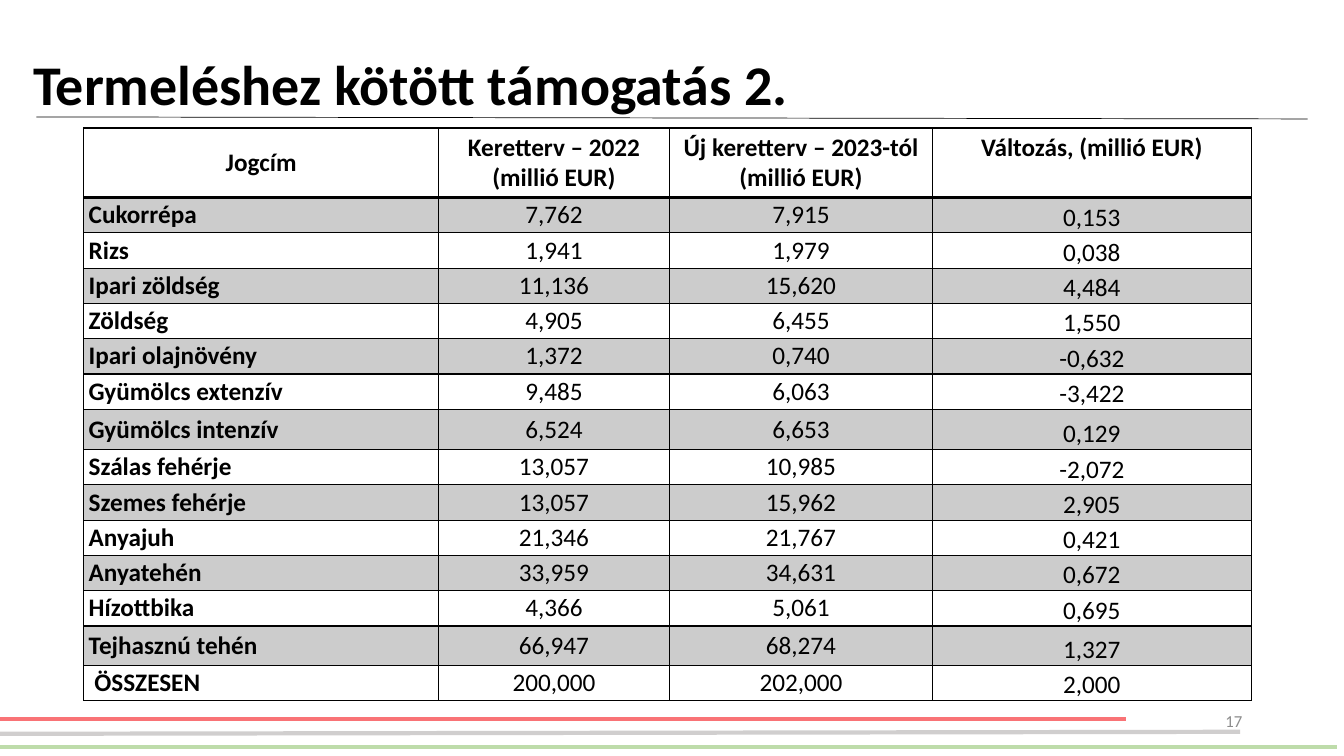
from lxml import etree
from pptx import Presentation
from pptx.dml.color import RGBColor
from pptx.enum.shapes import MSO_CONNECTOR
from pptx.enum.text import MSO_ANCHOR, PP_ALIGN
from pptx.oxml.ns import qn
from pptx.util import Pt

PX = 9144  # 100 px to the inch
TOP, MIDDLE, BOTTOM = MSO_ANCHOR.TOP, MSO_ANCHOR.MIDDLE, MSO_ANCHOR.BOTTOM
LEFT, CENTER, RIGHT = PP_ALIGN.LEFT, PP_ALIGN.CENTER, PP_ALIGN.RIGHT
STRAIGHT = MSO_CONNECTOR.STRAIGHT


def rgb(value):
    return RGBColor.from_string(value)


def write(tf, text, size, align, bold=False, color="000000"):
    for i, line in enumerate(text.split("\n")):
        p = tf.paragraphs[0] if i == 0 else tf.add_paragraph()
        p.alignment = align
        r = p.add_run()
        r.text = line
        r.font.name = "Calibri"
        r.font.size = Pt(size)
        r.font.bold = bold
        r.font.color.rgb = rgb(color)


prs = Presentation()
prs.slide_width, prs.slide_height = 1333 * PX, 750 * PX
s = prs.slides.add_slide(prs.slide_layouts[6])

# Footer stripes and title rule
for x1, y1, x2, y2, color, width in [
    (0, 713, 1117, 713, "F97376", 3),
    (0, 741, 1326, 741, "BEDCAA", 3),
    (0, 728, 1230, 726, "D0CECE", 3),
    (36, 116, 1297, 118, "000000", 0.5),
]:
    line = s.shapes.add_connector(STRAIGHT, x1 * PX, y1 * PX, x2 * PX, y2 * PX)
    line.line.color.rgb = rgb(color)
    line.line.width = Pt(width)
    etree.SubElement(line._element.spPr, qn("a:effectLst"))

# Title and page number
for x, y, w, h, text, size, align, bold, color in [
    (23, 14, 1150, 145, "Termeléshez kötött támogatás 2.", 40, LEFT, True, "000000"),
    (942, 695, 300, 40, "17", 12, RIGHT, False, "8C8C8C"),
]:
    tf = s.shapes.add_textbox(x * PX, y * PX, w * PX, h * PX).text_frame
    tf.word_wrap = True
    tf.vertical_anchor = MIDDLE
    write(tf, text, size, align, bold, color)
    tf.paragraphs[0].line_spacing = 0.9 if bold else 1.0

# Table data
rows = [
    ("Jogcím", "Keretterv – 2022\n(millió EUR)",
     "Új keretterv – 2023-tól (millió EUR)", "Változás, (millió EUR)"),
    ("Cukorrépa", "7,762", "7,915", "0,153"),
    ("Rizs", "1,941", "1,979", "0,038"),
    ("Ipari zöldség", "11,136", "15,620", "4,484"),
    ("Zöldség", "4,905", "6,455", "1,550"),
    ("Ipari olajnövény", "1,372", "0,740", "-0,632"),
    ("Gyümölcs extenzív", "9,485", "6,063", "-3,422"),
    ("Gyümölcs intenzív", "6,524", "6,653", "0,129"),
    ("Szálas fehérje", "13,057", "10,985", "-2,072"),
    ("Szemes fehérje", "13,057", "15,962", "2,905"),
    ("Anyajuh", "21,346", "21,767", "0,421"),
    ("Anyatehén", "33,959", "34,631", "0,672"),
    ("Hízottbika", "4,366", "5,061", "0,695"),
    ("Tejhasznú tehén", "66,947", "68,274", "1,327"),
    (" ÖSSZESEN", "200,000", "202,000", "2,000"),
]
col_widths = [352, 229, 261, 316]
row_heights = {0: 69, 7: 40, 13: 39}  # every other row is 35

# Table
table = s.shapes.add_table(len(rows), len(col_widths), 83 * PX, 127 * PX,
                           1158 * PX, 568 * PX).table
table.first_row = table.horz_banding = False
for j, width in enumerate(col_widths):
    table.columns[j].width = width * PX

for i, row in enumerate(rows):
    table.rows[i].height = row_heights.get(i, 35) * PX
    for j, text in enumerate(row):
        cell = table.cell(i, j)
        header, change = i == 0, j == 3
        side = 0 if change and not header else 5
        cell.margin_left = cell.margin_right = side * PX
        cell.margin_top = (4 if header and change else 0) * PX
        cell.margin_bottom = 0
        cell.vertical_anchor = (TOP if header else BOTTOM) if change else MIDDLE
        write(cell.text_frame, text, 18, CENTER if header or j else LEFT,
              header or j == 0)

        # Borders, heavier under the header
        tcPr = cell._tc.get_or_add_tcPr()
        for tag in ("a:lnL", "a:lnR", "a:lnT", "a:lnB"):
            heavy = (i, tag) in ((0, "a:lnB"), (1, "a:lnT"))
            ln = etree.SubElement(tcPr, qn(tag), w=str(Pt(2 if heavy else 1)))
            solid = etree.SubElement(ln, qn("a:solidFill"))
            etree.SubElement(solid, qn("a:srgbClr"), val="000000")

        # Odd rows are shaded with 20 % black
        if i % 2:
            cell.fill.solid()
            cell.fill.fore_color.rgb = rgb("000000")
            shade = tcPr.find(qn("a:solidFill")).find(qn("a:srgbClr"))
            etree.SubElement(shade, qn("a:alpha"), val="20000")
        else:
            cell.fill.background()

prs.save("out.pptx")
